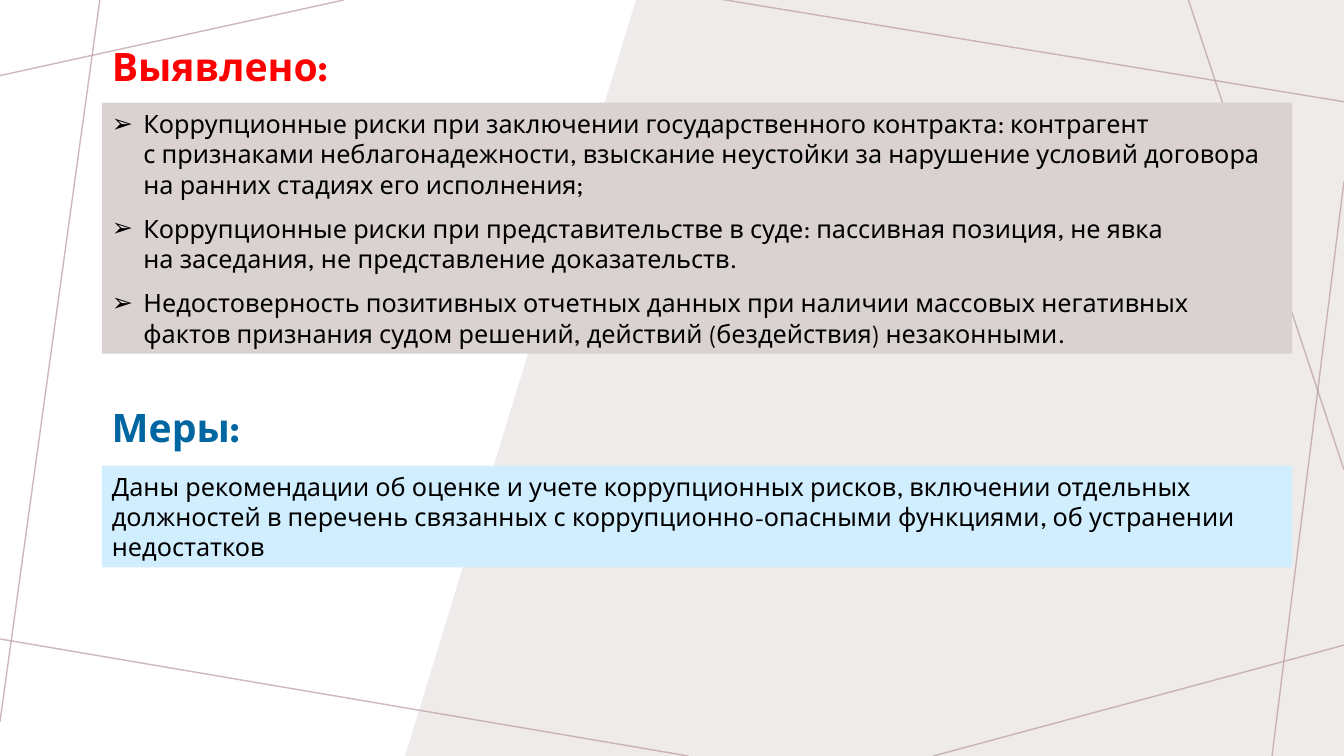
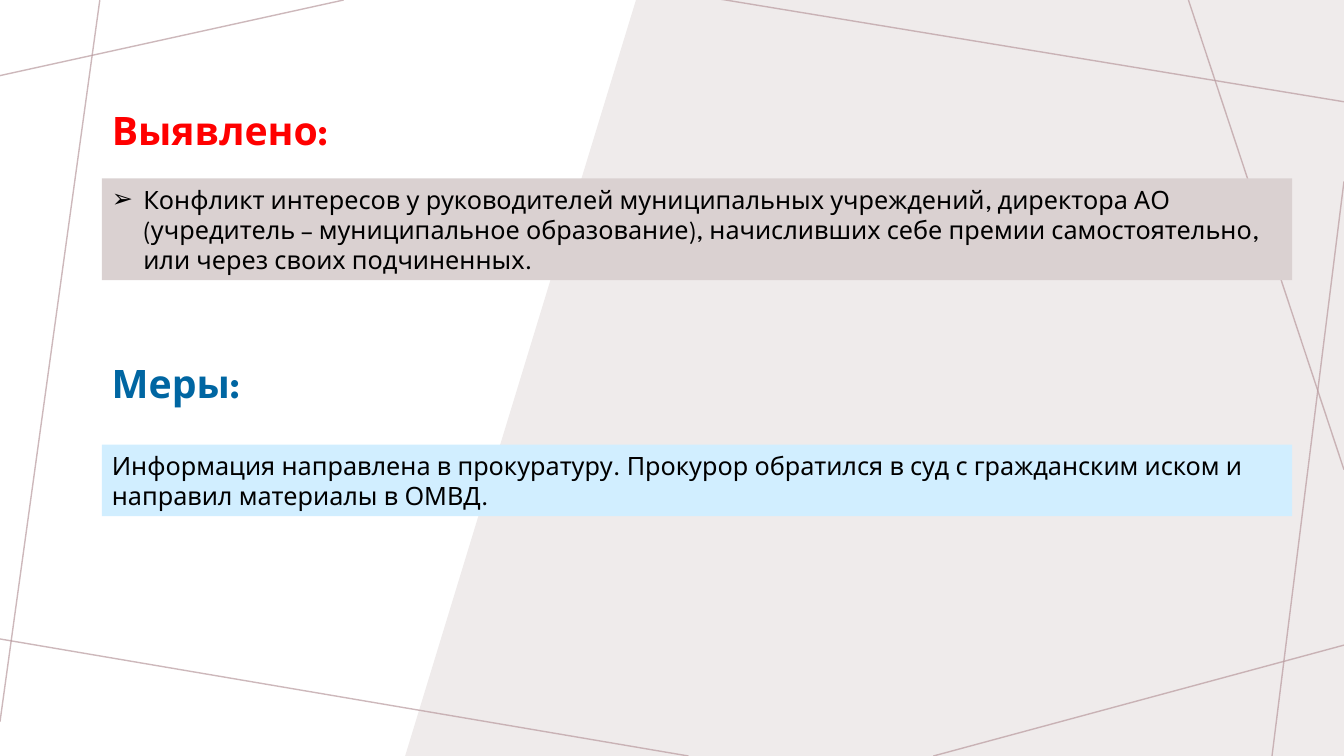
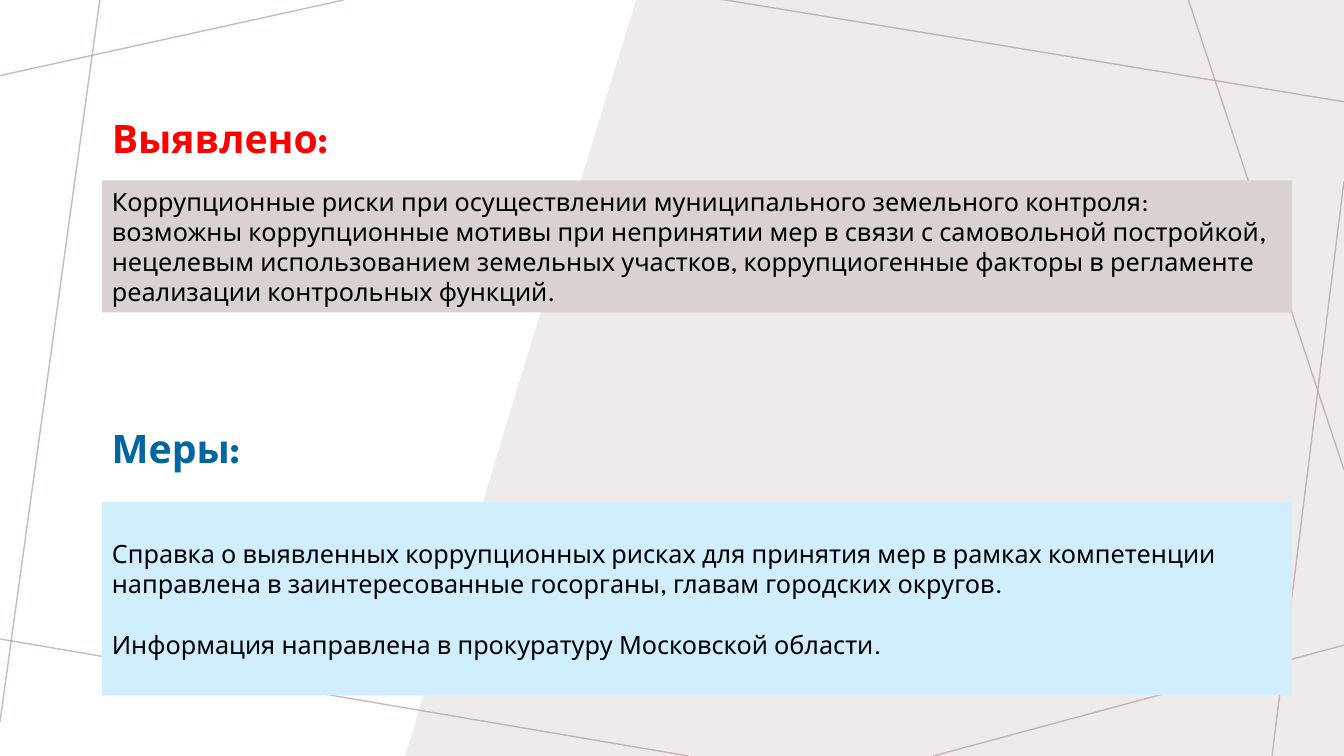
import copy
from dataclasses import dataclass

import pptx
import pptx.dml.color
import pptx.enum.shapes
import pptx.enum.text
import pptx.oxml
import pptx.oxml.ns
import pptx.util

Pt = pptx.util.Pt
qn = pptx.oxml.ns.qn
MIDDLE = pptx.enum.text.MSO_ANCHOR.MIDDLE


@dataclass(frozen=True)
class Theme:
    font: str = "League Spartan"
    heading_size: int = 28
    body_size: int = 18
    text: str = "000000"
    found: str = "FF0000"
    found_fill: str = "DAD1D1"
    measures: str = "0066A2"
    measures_fill: str = "D1EEFF"
    backdrop: str = "EFEBEB"
    rule: str = "B99B9F"
    rule_alpha: int = 70000
    left: float = 72.7
    width: float = 850.3
    heading_width: float = 187
    heading_height: float = 41
    indent: float = 22.5


T = Theme()
W, H = 960, 540

PANEL = [(454.3, 0), (W, 0), (W, H), (289.4, H)]
RULES = [
    (245.5, 0, 0, 54),
    (71.3, 0, 0, 515.5),
    (491.8, H, -3.6, 455.8),
    (W, 460.8, 666.7, H),
    (W, 129.6, 908.6, H),
    (W, 335.5, 848.9, 0),
    (W, 72.7, 514.1, -0.7),
]

# Each block holds the heading's top, the box's top and height, and its paragraphs.
SLIDES = [
    {
        "found": dict(heading_top=26.6, top=73.4, height=179.3, bullet="➢", gap=10, texts=[
            "Коррупционные риски при заключении государственного контракта: контрагент\n"
            "с признаками неблагонадежности, взыскание неустойки за нарушение условий договора "
            "на ранних стадиях его исполнения;",
            "Коррупционные риски при представительстве в суде: пассивная позиция, не явка\n"
            "на заседания, не представление доказательств.",
            "Недостоверность позитивных отчетных данных при наличии массовых негативных фактов "
            "признания судом решений, действий (бездействия) незаконными.",
        ]),
        "measures": dict(heading_top=284.4, top=332.6, height=72.7, texts=[
            "Даны рекомендации об оценке и учете коррупционных рисков, включении отдельных "
            "должностей в перечень связанных с коррупционно-опасными функциями, об устранении "
            "недостатков",
        ]),
    },
    {
        "found": dict(heading_top=72, top=127.4, height=72.7, bullet="➢", texts=[
            "Конфликт интересов у руководителей муниципальных учреждений, директора АО "
            "(учредитель – муниципальное образование), начисливших себе премии самостоятельно, "
            "или через своих подчиненных.",
        ]),
        "measures": dict(heading_top=252.7, top=317.5, height=51.1, texts=[
            "Информация направлена в прокуратуру. Прокурор обратился в суд с гражданским иском "
            "и направил материалы в ОМВД.",
        ]),
    },
    {
        "found": dict(heading_top=77.8, top=128.9, height=94.3, texts=[
            "Коррупционные риски при осуществлении муниципального земельного контроля: возможны "
            "коррупционные мотивы при непринятии мер в связи с самовольной постройкой, нецелевым "
            "использованием земельных участков, коррупциогенные факторы в регламенте реализации "
            "контрольных функций.",
        ]),
        "measures": dict(heading_top=299.5, top=358.6, height=138.2, gap=21.5, texts=[
            "Справка о выявленных коррупционных рисках для принятия мер в рамках компетенции "
            "направлена в заинтересованные госорганы, главам городских округов.",
            "Информация направлена в прокуратуру Московской области.",
        ]),
    },
]


def rgb(color):
    return pptx.dml.color.RGBColor.from_string(color)


def set_all(obj, values):
    for name, value in values.items():
        setattr(obj, name, value)


def place(sp, left, top, width, height):
    set_all(sp, dict(left=Pt(left), top=Pt(top), width=Pt(width), height=Pt(height)))


def sub(parent, tag, **attrs):
    el = pptx.oxml.parse_xml(f'<{tag} {pptx.oxml.ns.nsdecls("a")}/>')
    for name, value in attrs.items():
        el.set(name, str(value))
    parent.append(el)
    return el


def format_frame(tf):
    set_all(tf, dict(word_wrap=True, vertical_anchor=MIDDLE,
                     auto_size=pptx.enum.text.MSO_AUTO_SIZE.NONE))


def write(p, text, size, color, bold=False, before=0):
    """Fill a paragraph; a newline in the text becomes a line break of the same size."""
    p.text = text
    set_all(p, dict(alignment=pptx.enum.text.PP_ALIGN.LEFT,
                    space_before=Pt(before), space_after=Pt(0)))
    for r in p.runs:
        set_all(r.font, dict(name=T.font, size=Pt(size), bold=bold))
        r.font.color.rgb = rgb(color)
    for br in p._p.findall(qn("a:br")):
        br.append(copy.deepcopy(p.runs[0]._r.rPr))


def format_heading(sp, text, top, color):
    place(sp, T.left, top, T.heading_width, T.heading_height)
    format_frame(sp.text_frame)
    write(sp.text_frame.paragraphs[0], text, T.heading_size, color, bold=True)


def set_bullet(p, bullet):
    indent = int(Pt(T.indent)) if bullet else 0
    pPr = p._p.get_or_add_pPr()
    pPr.set("marL", str(indent))
    pPr.set("indent", str(-indent))
    if bullet:
        sub(pPr, "a:buChar", char=bullet)
    else:
        sub(pPr, "a:buNone")


def format_box(sp, fill, block):
    place(sp, T.left, block["top"], T.width, block["height"])
    sp.fill.solid()
    sp.fill.fore_color.rgb = rgb(fill)
    tf = sp.text_frame
    format_frame(tf)
    for i, text in enumerate(block["texts"]):
        p = tf.add_paragraph() if i else tf.paragraphs[0]
        set_bullet(p, block.get("bullet"))
        write(p, text, T.body_size, T.text, before=block.get("gap", 0) if i else 0)


def add_panel(s):
    points = [(Pt(x), Pt(y)) for x, y in PANEL]
    builder = s.shapes.build_freeform(*points[0])
    builder.add_line_segments(points[1:], close=True)
    sp = builder.convert_to_shape()
    sp.shadow.inherit = False
    sp.fill.solid()
    sp.fill.fore_color.rgb = rgb(T.backdrop)
    sp.line.fill.background()
    return sp


def add_rule(s, ends):
    line = s.shapes.add_connector(pptx.enum.shapes.MSO_CONNECTOR.STRAIGHT,
                                  *[Pt(v) for v in ends])
    line.line.width = Pt(1)
    line.line.color.rgb = rgb(T.rule)
    spPr = line._element.spPr
    sub(spPr.find(".//" + qn("a:srgbClr")), "a:alpha", val=T.rule_alpha)
    sub(spPr, "a:effectLst")
    return line


def add_backdrop(s):
    """Draw the shared backdrop, then move it to the layout so every slide shows it."""
    drawn = [add_panel(s)] + [add_rule(s, ends) for ends in RULES]
    tree = s.slide_layout.shapes._spTree
    for i, sp in enumerate(drawn):
        el = sp._element
        el.find(".//" + qn("p:cNvPr")).set("id", str(100 + i))
        tree.insert(2 + i, el)


def fill_slide(s, found, measures):
    title, found_box, measures_box = s.placeholders
    format_heading(title, "Выявлено:", found["heading_top"], T.found)
    format_box(found_box, T.found_fill, found)
    heading = s.shapes.add_textbox(0, 0, 0, 0)
    format_heading(heading, "Меры:", measures["heading_top"], T.measures)
    format_box(measures_box, T.measures_fill, measures)


def main():
    prs = pptx.Presentation()
    set_all(prs, dict(slide_width=Pt(W), slide_height=Pt(H)))
    layout = prs.slide_layouts.get_by_name("Two Content")
    for i, content in enumerate(SLIDES):
        s = prs.slides.add_slide(layout)
        if i == 0:
            add_backdrop(s)
        fill_slide(s, **content)
    prs.save("out.pptx")


if __name__ == "__main__":
    main()
